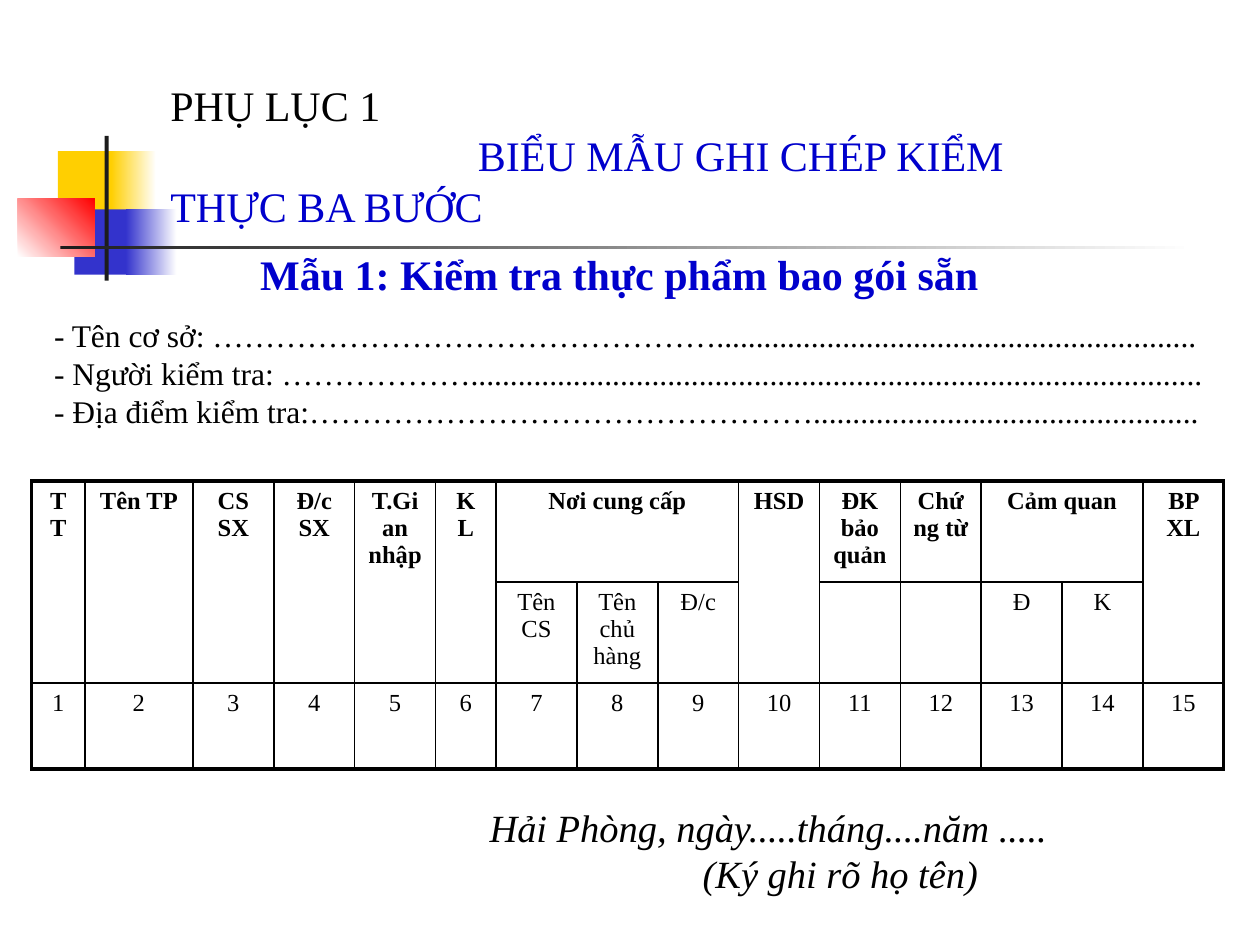
from dataclasses import dataclass
from typing import Optional

from lxml.etree import SubElement
from pptx import Presentation
from pptx.dml.color import RGBColor
from pptx.enum.shapes import MSO_SHAPE as Shape
from pptx.enum.text import MSO_ANCHOR as Anchor, MSO_AUTO_SIZE as AutoSize, PP_ALIGN as Align
from pptx.oxml.ns import qn
from pptx.util import Cm, Pt

FONT = "Times New Roman"
COLORS = {
    "black": "000000", "white": "FFFFFF", "heading": "0000CC", "yellow": "FFCF01",
    "blue": "3333CC", "red": "FF0000", "dark": "1C1C1C",
}


@dataclass
class Block:
    left: float
    top: float
    width: float
    height: float
    color: str
    fade_to: Optional[str] = None
    angle: float = 0


@dataclass
class Line:
    text: str
    size: float
    color: str = "black"
    align: Align = Align.LEFT
    bold: bool = False
    italic: bool = False
    before: float = 0
    margin: float = 0
    indent: float = 0


@dataclass
class Merge:
    row: int
    col: int
    last_row: int
    last_col: int


BLOCKS = [
    Block(1.17, 3.05, 1.22, 1.32, "yellow"),
    Block(2.24, 3.05, 0.91, 1.32, "yellow", "white"),
    Block(1.5, 4.22, 1.17, 1.32, "blue"),
    Block(2.54, 4.22, 1.02, 1.32, "blue", "white"),
    Block(0.36, 4.01, 1.55, 1.17, "white", "red", 45),
    Block(2.11, 2.74, 0.08, 2.92, "dark"),
    Block(1.22, 4.95, 22.86, 0.08, "dark", "white"),
]

COLUMNS = [1.07, 2.18] + [1.63] * 3 + [1.22] + [1.63] * 9
ROWS = [2.03, 2.03, 1.73]
HEADERS = {
    0: "TT", 1: "Tên TP", 2: "CS SX", 3: "Đ/c SX", 4: "T.Gian nhập", 5: "KL",
    6: "Nơi cung cấp", 9: "HSD", 10: "ĐK bảo quản", 11: "Chứng từ",
    12: "Cảm quan", 14: "BP XL",
}
SUBHEADERS = {6: "Tên CS", 7: "Tên chủ hàng", 8: "Đ/c", 12: "Đ", 13: "K"}
NUMBERS = {c: str(c + 1) for c in range(len(COLUMNS))}
MERGES = [Merge(0, c, 1, c) for c in (0, 1, 2, 3, 4, 5, 9, 14)]
MERGES += [Merge(0, 6, 0, 8), Merge(0, 12, 0, 13)]
THIN, THICK = 1, 2.25


def rgb(name: str) -> RGBColor:
    return RGBColor.from_string(COLORS[name])


def draw_block(slide, block: Block) -> None:
    sp = slide.shapes.add_shape(
        Shape.RECTANGLE, Cm(block.left), Cm(block.top), Cm(block.width), Cm(block.height))
    sp.shadow.inherit = False
    sp.line.fill.background()
    if block.fade_to is None:
        sp.fill.solid()
        sp.fill.fore_color.rgb = rgb(block.color)
        return
    sp.fill.gradient()
    sp.fill.gradient_angle = block.angle
    for stop, name in zip(sp.fill.gradient_stops, (block.color, block.fade_to)):
        stop.color.rgb = rgb(name)


def write_lines(tf, lines: list[Line]) -> None:
    for i, line in enumerate(lines):
        p = tf.paragraphs[0] if i == 0 else tf.add_paragraph()
        p.text = line.text
        p.alignment = line.align
        p.space_before = Pt(line.before)
        p.font.name = FONT
        p.font.size = Pt(line.size)
        p.font.bold = line.bold
        p.font.italic = line.italic
        p.font.color.rgb = rgb(line.color)
        if line.margin or line.indent:
            pPr = p._p.get_or_add_pPr()
            pPr.set("marL", str(Cm(line.margin)))
            pPr.set("indent", str(Cm(line.indent)))


def place_text(sp, left: float, top: float, width: float, height: float,
               lines: list[Line]) -> None:
    sp.left, sp.top, sp.width, sp.height = Cm(left), Cm(top), Cm(width), Cm(height)
    tf = sp.text_frame
    tf.word_wrap = True
    tf.auto_size = AutoSize.SHAPE_TO_FIT_TEXT
    tf.vertical_anchor = Anchor.TOP
    write_lines(tf, lines)


def add_text(slide, left: float, top: float, width: float, height: float,
             lines: list[Line]) -> None:
    place_text(slide.shapes.add_textbox(0, 0, 0, 0), left, top, width, height, lines)


def set_borders(cell, widths: dict[str, float]) -> None:
    tcPr = cell._tc.get_or_add_tcPr()
    for side, width in widths.items():
        ln = SubElement(tcPr, qn(f"a:ln{side}"), w=str(Pt(width)))
        fill = SubElement(ln, qn("a:solidFill"))
        SubElement(fill, qn("a:srgbClr"), val=COLORS["black"])


def draw_table(slide) -> None:
    frame = slide.shapes.add_table(
        len(ROWS), len(COLUMNS), Cm(0.64), Cm(9.7), Cm(sum(COLUMNS)), Cm(sum(ROWS)))
    table = frame.table
    table.first_row = table.horz_banding = False
    for column, width in zip(table.columns, COLUMNS):
        column.width = Cm(width)
    for row, height in zip(table.rows, ROWS):
        row.height = Cm(height)
    for r, texts in enumerate((HEADERS, SUBHEADERS, NUMBERS)):
        for c in range(len(COLUMNS)):
            cell = table.cell(r, c)
            set_borders(cell, {
                "L": THICK if c == 0 else THIN,
                "R": THICK if c == len(COLUMNS) - 1 else THIN,
                "T": THICK if r == 0 else THIN,
                "B": THICK if r == len(ROWS) - 1 else THIN,
            })
            cell.fill.background()
            if c in texts:
                write_lines(cell.text_frame,
                            [Line(texts[c], 14, align=Align.CENTER, bold=r == 0)])
    for m in MERGES:
        table.cell(m.row, m.col).merge(table.cell(m.last_row, m.last_col))


def main() -> None:
    prs = Presentation()
    prs.slide_width, prs.slide_height = Cm(25.4), Cm(19.05)
    s = prs.slides.add_slide(prs.slide_layouts[5])
    for block in BLOCKS:
        draw_block(s, block)
    draw_table(s)
    add_text(s, 9.32, 16.08, 15.24, 2.11, [
        Line("Hải Phòng, ngày.....tháng....năm .....", 22, italic=True, before=3, margin=0.3),
        Line("(Ký ghi rõ họ tên)", 22, italic=True, align=Align.CENTER),
    ])
    add_text(s, 0.84, 6.25, 23.7, 2.54, [
        Line("- Tên cơ sở: …………………………………………" + "." * 61, 18),
        Line("- Người kiểm tra: ………………" + "." * 93, 18),
        Line("- Địa điểm kiểm tra:…………………………………………" + "." * 49, 18),
    ])
    add_text(s, 3.38, 4.88, 18.21, 1.27, [
        Line("Mẫu 1: Kiểm tra thực phẩm bao gói sẵn", 24, "heading", Align.CENTER,
             bold=True, before=3),
    ])
    place_text(s.shapes.title, 3.18, 1.47, 17.78, 3.3, [
        Line("PHỤ LỤC 1", 24, before=3),
        Line("BIỂU MẪU GHI CHÉP KIỂM THỰC BA BƯỚC", 24, "heading", indent=6.2),
    ])
    prs.save("out.pptx")


if __name__ == "__main__":
    main()
